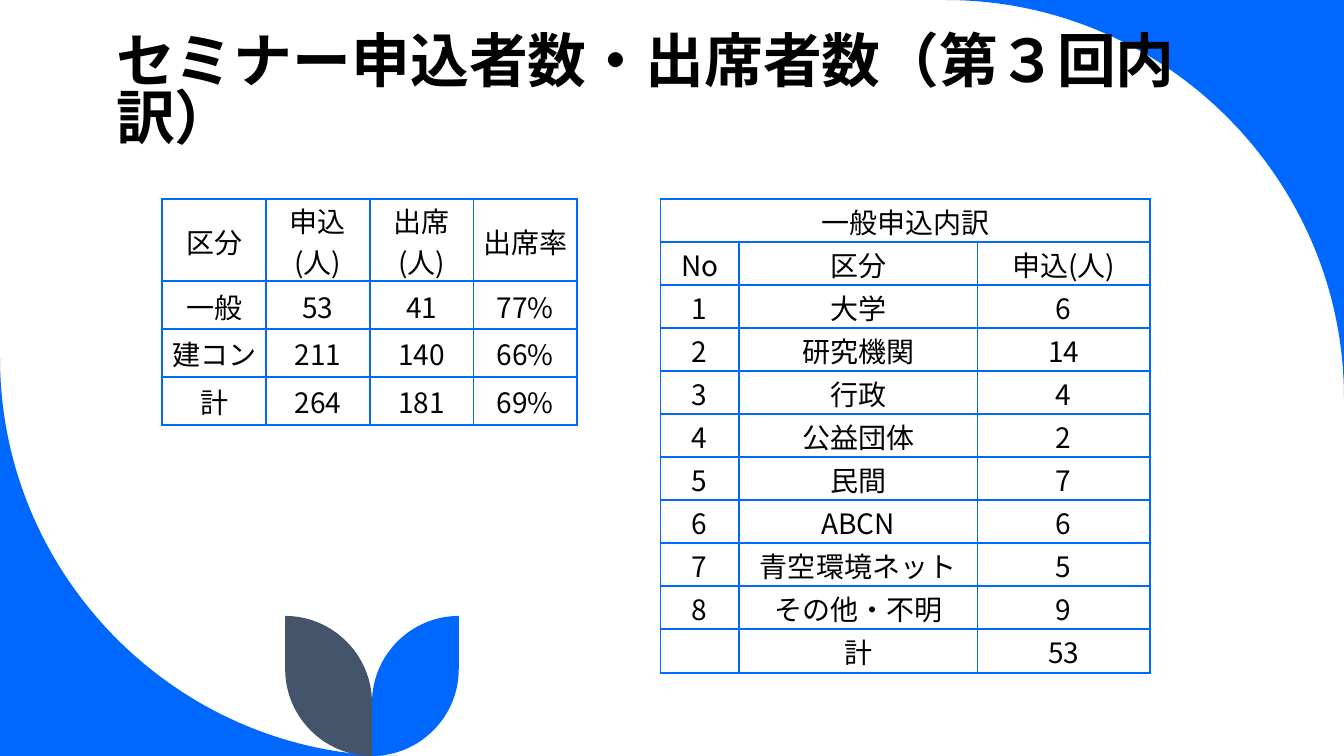
from dataclasses import dataclass

from lxml import etree
from pptx import Presentation
from pptx import util as u
from pptx.dml.color import RGBColor
from pptx.enum import lang, text
from pptx.oxml import ns


@dataclass(frozen=True)
class Theme:
    blue: str = "0068FF"
    slate: str = "44546A"
    ink: str = "000000"
    font: str = "Noto Sans CJK JP"
    title_size: int = 42
    table_size: int = 20
    border: float = 1.5


def quarter_curve(start, corner, end, pull=0.55):
    controls = [tuple(a + pull * (b - a) for a, b in zip(tip, corner))
                for tip in (start, end)]
    return [*controls, end]


def write_text(frame, words, *, theme, size, bold=False, align=None, spacing=None):
    paragraph = frame.paragraphs[0]
    paragraph.alignment = align
    paragraph.line_spacing = spacing
    run = paragraph.add_run()
    run.text = words
    font = run.font
    font.name, font.size, font.bold = theme.font, u.Pt(size), bold
    font.color.rgb = RGBColor.from_string(theme.ink)
    font.language_id = lang.MSO_LANGUAGE_ID.JAPANESE
    latin = run._r.rPr.find(ns.qn("a:latin"))
    latin.addnext(etree.Element(ns.qn("a:ea"), typeface=theme.font))


class SlideBuilder:
    def __init__(self, slide, theme):
        self.slide = slide
        self.theme = theme

    def outline(self, start, segments, color):
        corners = [(u.Pt(x), u.Pt(y)) for segment in segments for x, y in segment]
        builder = self.slide.shapes.build_freeform(*map(u.Pt, start))
        builder.add_line_segments(corners, close=True)
        shape = builder.convert_to_shape()
        strokes = iter(list(shape._element.iter(ns.qn("a:lnTo"))))
        for segment in segments:
            pieces = [next(strokes) for _ in segment]
            if len(pieces) == 3:
                curve = etree.Element(ns.qn("a:cubicBezTo"))
                pieces[0].addprevious(curve)
                for piece in pieces:
                    curve.append(piece[0])
                    piece.getparent().remove(piece)
        shape.shadow.inherit = False
        shape.fill.solid()
        shape.fill.fore_color.rgb = RGBColor.from_string(color)
        shape.line.fill.background()

    def leaf(self, stem, tip, top, bottom, color):
        size = abs(tip - stem)
        outer, inner = (tip, bottom - size), (stem, top + size)
        self.outline((tip, top), [
            [outer],
            quarter_curve(outer, (tip, bottom), (stem, bottom)),
            [inner],
            quarter_curve(inner, (stem, top), (tip, top)),
        ], color)

    def title(self, words, left, top, width, height):
        box = self.slide.shapes.add_textbox(*map(u.Pt, (left, top, width, height)))
        frame = box.text_frame
        frame.word_wrap = True
        frame.vertical_anchor = text.MSO_ANCHOR.BOTTOM
        write_text(frame, words, theme=self.theme, size=self.theme.title_size,
                   bold=True, spacing=0.8)

    def table(self, rows, left, top, widths, heights, heading=False):
        frame = self.slide.shapes.add_table(
            len(rows), len(widths), u.Pt(left), u.Pt(top),
            u.Pt(sum(widths)), u.Pt(sum(heights)))
        table = frame.table
        table.first_row = table.horz_banding = False
        for column, width in zip(table.columns, widths):
            column.width = u.Pt(width)
        for row, height, values in zip(table.rows, heights, rows):
            row.height = u.Pt(height)
            for cell, words in zip(row.cells, values):
                self.cell(cell, words)
        if heading:
            table.cell(0, 0).merge(table.cell(0, len(widths) - 1))

    def cell(self, cell, words):
        cell.margin_left = cell.margin_right = cell.margin_top = u.Pt(0.75)
        cell.margin_bottom = 0
        cell.vertical_anchor = text.MSO_ANCHOR.MIDDLE
        properties = cell._tc.get_or_add_tcPr()
        for side in ("lnL", "lnR", "lnT", "lnB"):
            line = etree.SubElement(properties, ns.qn(f"a:{side}"),
                                    w=str(u.Pt(self.theme.border)))
            fill = etree.SubElement(line, ns.qn("a:solidFill"))
            etree.SubElement(fill, ns.qn("a:srgbClr"), val=self.theme.blue)
        cell.fill.background()
        if words:
            write_text(cell.text_frame, words, theme=self.theme,
                       size=self.theme.table_size, align=text.PP_ALIGN.CENTER)


ATTENDANCE = [
    ("区分", "申込(人)", "出席(人)", "出席率"),
    ("一般", "53", "41", "77%"),
    ("建コン", "211", "140", "66%"),
    ("計", "264", "181", "69%"),
]
APPLICANTS = [
    ("大学", "6"), ("研究機関", "14"), ("行政", "4"), ("公益団体", "2"),
    ("民間", "7"), ("ABCN", "6"), ("青空環境ネット", "5"), ("その他・不明", "9"),
]


def main():
    deck = Presentation()
    width, height = 960, 540
    deck.slide_width, deck.slide_height = u.Pt(width), u.Pt(height)
    theme = Theme()
    page = SlideBuilder(deck.slides.add_slide(deck.slide_layouts[6]), theme)

    sweep = 284.4
    for corner, across, along in (
        ((width, 0), (width - sweep, 0), (width, sweep)),
        ((0, height), (sweep, height), (0, height - sweep)),
    ):
        page.outline(corner, [[along], quarter_curve(along, corner, across)],
                     theme.blue)

    stem, leaf_width = 265.7, 62
    page.leaf(stem, stem + leaf_width, 440, height, theme.blue)
    page.leaf(stem, stem - leaf_width, 440, height, theme.slate)

    page.title("セミナー申込者数・出席者数（第３回内訳）", 75.9, 15.1, 823.7, 95.8)
    page.table(ATTENDANCE, 115.9, 142.4, [74.1] * 4, [58.6] + [34.2] * 3)
    breakdown = [("一般申込内訳", "", ""), ("No", "区分", "申込(人)")]
    breakdown += [(str(n), *entry) for n, entry in enumerate(APPLICANTS, 1)]
    breakdown.append(("", "計", "53"))
    page.table(breakdown, 471.8, 142.4, [56, 170.4, 123.2],
               [30.7] * 10 + [31.4], heading=True)
    deck.save("out.pptx")


if __name__ == "__main__":
    main()
